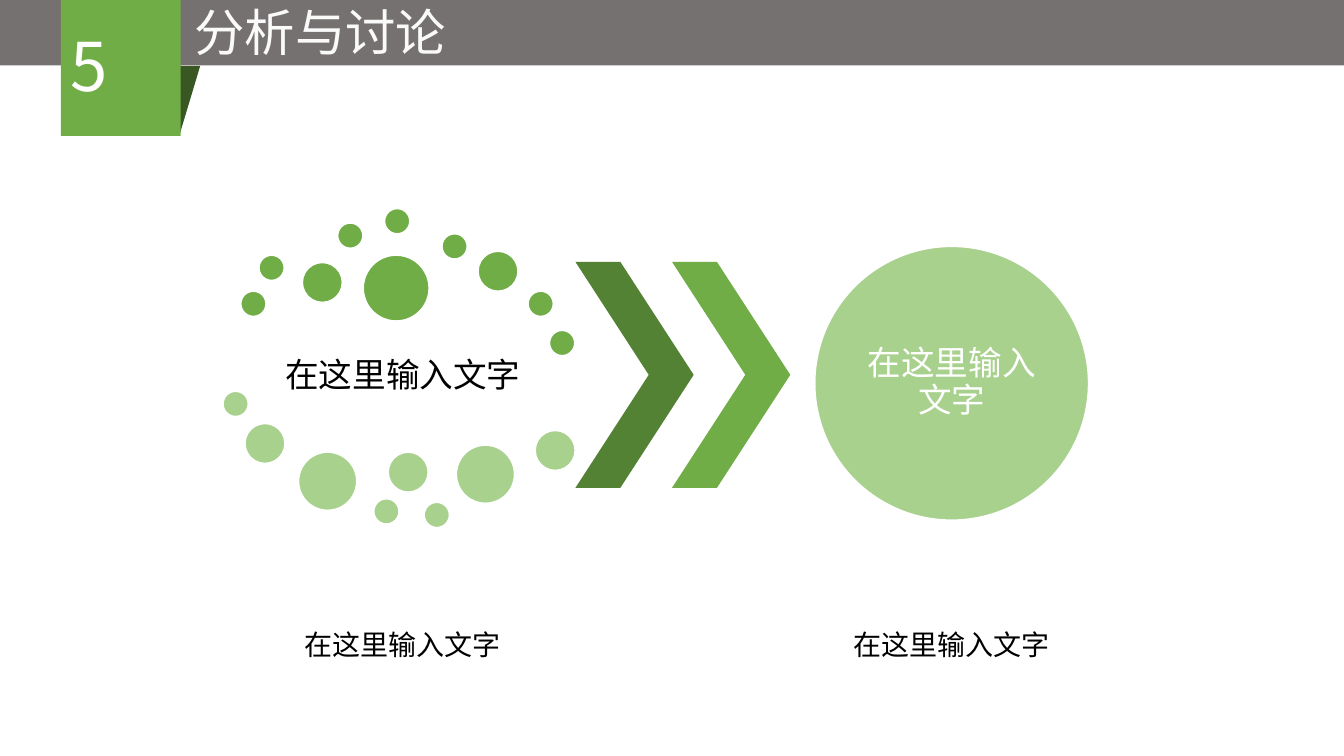
"""Build the analysis and discussion slide: dot cloud, chevrons and result circle."""
from lxml import etree
from pptx import Presentation
from pptx import util as u
from pptx.dml.color import RGBColor
from pptx.enum import shapes, text
from pptx.oxml.ns import qn

FONT = "Noto Sans CJK SC"
GREEN, PALE, DARK, DEEP = "70AD47", "A9D18E", "548235", "385723"
WHITE, BLACK = "FFFFFF", "000000"
PROMPT = "在这里输入文字"
KIND = shapes.MSO_SHAPE

deck = Presentation()
deck.slide_width, deck.slide_height = u.Pt(960), u.Pt(540)
page = deck.slides.add_slide(deck.slide_layouts[6])


def add_figure(kind, left, top, width, height, fill, outline=None):
    figure = page.shapes.add_shape(kind, u.Pt(left), u.Pt(top), u.Pt(width), u.Pt(height))
    figure.shadow.inherit = False
    figure.fill.solid()
    figure.fill.fore_color.rgb = RGBColor.from_string(fill)
    if outline:
        figure.line.color.rgb = RGBColor.from_string(outline)
        figure.line.width = u.Pt(1)
    else:
        figure.line.fill.background()
    return figure


def write(box, words, size, color, margins, spacing=None, align=text.PP_ALIGN.CENTER):
    frame = box.text_frame
    frame.word_wrap = True
    frame.vertical_anchor = text.MSO_ANCHOR.MIDDLE
    frame.margin_left, frame.margin_top, frame.margin_right, frame.margin_bottom = map(u.Pt, margins)
    para = frame.paragraphs[0]
    para.text = words
    para.alignment = align
    para.line_spacing = spacing
    para.font.size = u.Pt(size)
    para.font.color.rgb = RGBColor.from_string(color)
    para.font.name = FONT
    etree.SubElement(para._p.pPr.find(qn("a:defRPr")), qn("a:ea"), typeface=FONT)


add_figure(KIND.RECTANGLE, 0, -0.7, 960, 47.5, "767171")

dots = {
    GREEN: [(172, 208, 18), (185, 182.3, 18), (216, 187.5, 28.5), (241.2, 159.3, 18),
            (274.7, 149, 18), (315.7, 167, 18), (341.5, 179.5, 28.5), (377.2, 208, 18),
            (392.5, 236, 18), (259.5, 182.3, 47)],
    PALE: [(159.3, 279.5, 18), (175, 302.5, 28.5), (213.3, 323, 41.5), (267, 356.3, 18),
           (277.3, 323, 28.5), (303, 358.8, 18), (326, 318, 41.5), (382.3, 307.5, 28.5)],
}
for color, places in dots.items():
    for left, top, size in places:
        add_figure(KIND.OVAL, left, top, size, size, color, WHITE)

for left, color in ((411, DARK), (480, GREEN)):
    chevron = add_figure(KIND.CHEVRON, left, 187, 84.5, 161.5, color)
    chevron.adjustments[0] = 0.62

add_figure(KIND.OVAL, 582, 176, 195.5, 195.5, PALE, WHITE)

fold = add_figure(KIND.FLOWCHART_DATA, 68, 47, 75, 50, DEEP)
fold.rotation = 180
tab = add_figure(KIND.RECTANGLE, 43.5, -1, 85.5, 98, GREEN)
write(tab, "5", 48, WHITE, (7, 0, 0, 4), align=text.PP_ALIGN.LEFT)

labels = [
    (106, -3, 245.5, 50.5, "分析与讨论", 36, "FAFAFA", (7.2, 3.6, 7.2, 3.6), None),
    (173, 231, 229.5, 75.5, PROMPT, 24, BLACK, (2, 2, 2, 2), 0.9),
    (173, 391, 229.5, 142, PROMPT, 20, BLACK, (2, 2, 2, 2), 0.9),
    (610.5, 204.5, 138.5, 138.5, PROMPT, 24, WHITE, (0, 0, 0, 0), 0.9),
    (564.5, 391, 230, 142, PROMPT, 20, BLACK, (2, 2, 2, 2), 0.9),
]
for left, top, width, height, words, size, color, margins, spacing in labels:
    label = page.shapes.add_textbox(u.Pt(left), u.Pt(top), u.Pt(width), u.Pt(height))
    write(label, words, size, color, margins, spacing)

deck.save("out.pptx")
